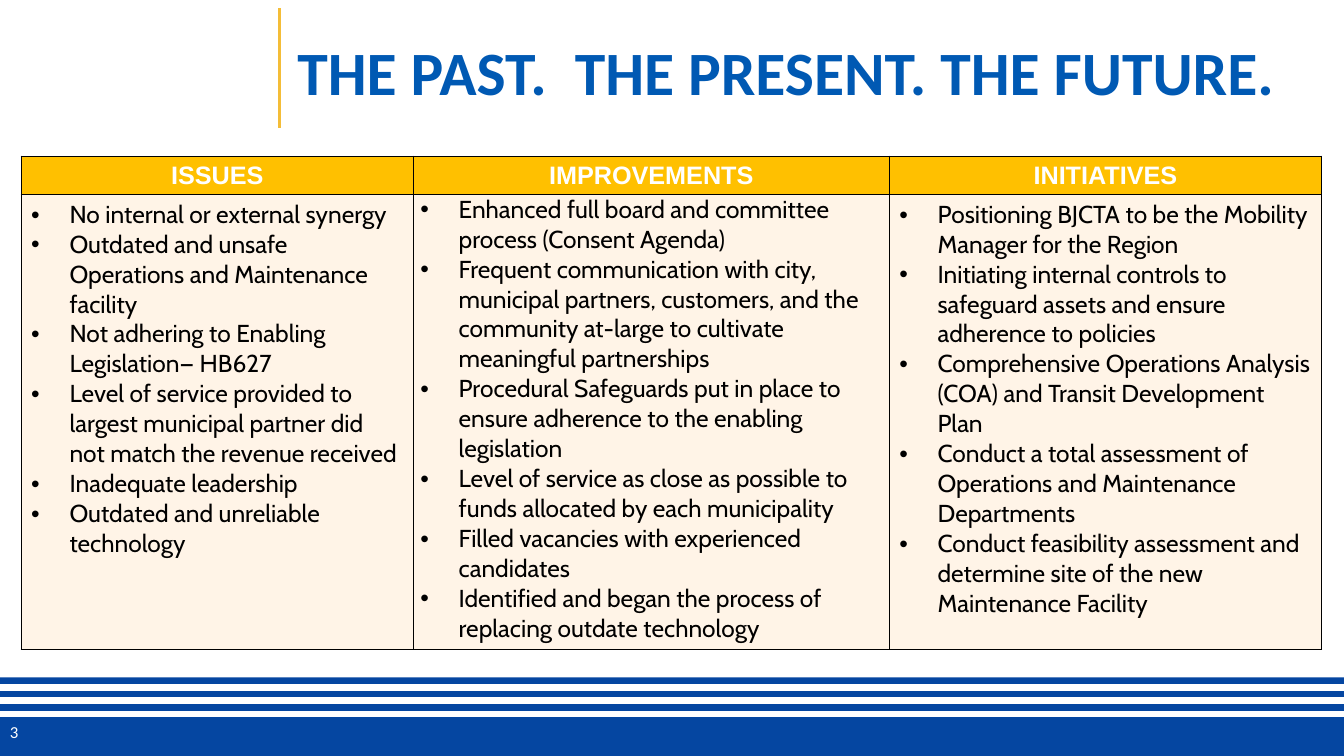
from lxml.etree import SubElement
from pptx import Presentation
from pptx.dml.color import RGBColor
from pptx.enum.shapes import MSO_CONNECTOR, MSO_SHAPE
from pptx.enum.text import MSO_ANCHOR, MSO_AUTO_SIZE, PP_ALIGN
from pptx.oxml.ns import qn
from pptx.util import Inches, Pt

BLUE = RGBColor(0x05, 0x46, 0xA1)
TITLE_BLUE = RGBColor(0x00, 0x59, 0xB3)
GOLD = RGBColor(0xF4, 0xBD, 0x38)
AMBER = RGBColor(0xFF, 0xC0, 0x00)
CREAM = RGBColor(0xFF, 0xF4, 0xE7)
WHITE = RGBColor(0xFF, 0xFF, 0xFF)
BLACK = RGBColor(0x00, 0x00, 0x00)

WIDTH, HEIGHT = 13.33, 7.5
BAND_TOP = 6.72
STRIPE_GAP = 0.13
INDENT = Inches(0.38)

COLUMNS = [
    ("ISSUES", 3.89, [
        "No internal or external synergy",
        "Outdated and unsafe Operations and Maintenance facility",
        "Not adhering to Enabling Legislation— HB627",
        "Level of service provided to largest municipal partner did not match the revenue received",
        "Inadequate leadership",
        "Outdated and unreliable technology",
    ]),
    ("IMPROVEMENTS", 4.72, [
        "Enhanced full board and committee process (Consent Agenda)",
        "Frequent communication with city, municipal partners, customers, and the "
        "community at-large to cultivate meaningful partnerships",
        "Procedural Safeguards put in place to ensure adherence to the enabling legislation",
        "Level of service as close as possible to funds allocated by each municipality",
        "Filled vacancies with experienced candidates",
        "Identified and began the process of replacing outdate technology",
    ]),
    ("INITIATIVES", 4.29, [
        "Positioning BJCTA to be the Mobility Manager for the Region",
        "Initiating internal controls to safeguard assets and ensure adherence to policies",
        "Comprehensive Operations Analysis (COA) and Transit Development Plan",
        "Conduct a total assessment of Operations and Maintenance Departments",
        "Conduct feasibility assessment and determine site of the new Maintenance Facility",
    ]),
]
ROW_HEIGHTS = [0.37, 4.51]


def add_span(para, text, font, size, color, bold=False):
    span = para.add_run()
    span.text = text
    span.font.name = font
    span.font.size = Pt(size)
    span.font.bold = bold
    span.font.color.rgb = color


def style_cell(cell, fill):
    """Give the cell thin black borders and a solid fill."""
    properties = cell._tc.get_or_add_tcPr()
    for side in ("a:lnL", "a:lnR", "a:lnT", "a:lnB"):
        border = SubElement(properties, qn(side), w=str(Pt(1)))
        solid = SubElement(border, qn("a:solidFill"))
        SubElement(solid, qn("a:srgbClr"), val=str(BLACK))
    cell.fill.solid()
    cell.fill.fore_color.rgb = fill


deck = Presentation()
deck.slide_width, deck.slide_height = Inches(WIDTH), Inches(HEIGHT)
page = deck.slides.add_slide(deck.slide_layouts[5])

# Footer band, its white stripes and the gold rule beside the title
band = page.shapes.add_shape(MSO_SHAPE.RECTANGLE, 0, Inches(BAND_TOP),
                             Inches(WIDTH), Inches(HEIGHT - BAND_TOP))
band.shadow.inherit = False
band.fill.solid()
band.fill.fore_color.rgb = BLUE
band.line.fill.background()

stripes = [BAND_TOP + 0.1 + STRIPE_GAP * step for step in range(3)]
rules = [(0, y, WIDTH, y, WHITE, 4.5) for y in stripes]
rules.append((2.77, 0.08, 2.77, 1.27, GOLD, 2.25))
for x1, y1, x2, y2, color, weight in rules:
    rule = page.shapes.add_connector(MSO_CONNECTOR.STRAIGHT, Inches(x1), Inches(y1),
                                     Inches(x2), Inches(y2))
    rule.line.color.rgb = color
    rule.line.width = Pt(weight)
    SubElement(rule._element.spPr, qn("a:effectLst"))

# Title
title = page.shapes.title
title.left, title.top = Inches(2.85), Inches(0.15)
title.width, title.height = Inches(10.08), Inches(1.19)
title.text_frame.auto_size = MSO_AUTO_SIZE.NONE
title.text_frame.vertical_anchor = MSO_ANCHOR.MIDDLE
para = title.text_frame.paragraphs[0]
para.alignment = PP_ALIGN.LEFT
para.line_spacing = 0.9
add_span(para, "THE PAST.  THE PRESENT. THE FUTURE.", "Calibri", 44, TITLE_BLUE, True)

# Table
table = page.shapes.add_table(2, len(COLUMNS), Inches(0.21), Inches(1.55),
                              Inches(sum(width for _, width, _ in COLUMNS)),
                              Inches(sum(ROW_HEIGHTS))).table
for row, height in zip(table.rows, ROW_HEIGHTS):
    row.height = Inches(height)

for index, (heading, width, points) in enumerate(COLUMNS):
    table.columns[index].width = Inches(width)
    header, body = table.cell(0, index), table.cell(1, index)
    style_cell(header, AMBER)
    style_cell(body, CREAM)

    header.vertical_anchor = MSO_ANCHOR.MIDDLE
    para = header.text_frame.paragraphs[0]
    para.alignment = PP_ALIGN.CENTER
    add_span(para, heading, "Arial", 18, WHITE, True)

    if heading == "IMPROVEMENTS":
        body.margin_left = body.margin_right = Inches(0.07)
        body.margin_top = body.margin_bottom = 0
    for number, point in enumerate(points):
        frame = body.text_frame
        para = frame.add_paragraph() if number else frame.paragraphs[0]
        layout = para._p.get_or_add_pPr()
        layout.set("marL", str(INDENT))
        layout.set("indent", str(-INDENT))
        SubElement(layout, qn("a:buFont"), typeface="Arial")
        SubElement(layout, qn("a:buChar"), char="•")
        add_span(para, point, "Cabin", 17.5, BLACK)

# Page number
box = page.shapes.add_textbox(0, Inches(7.11), Inches(0.48), Inches(0.4))
box.text_frame.word_wrap = True
add_span(box.text_frame.paragraphs[0], "3", "Calibri", 12, WHITE)

deck.save("out.pptx")
